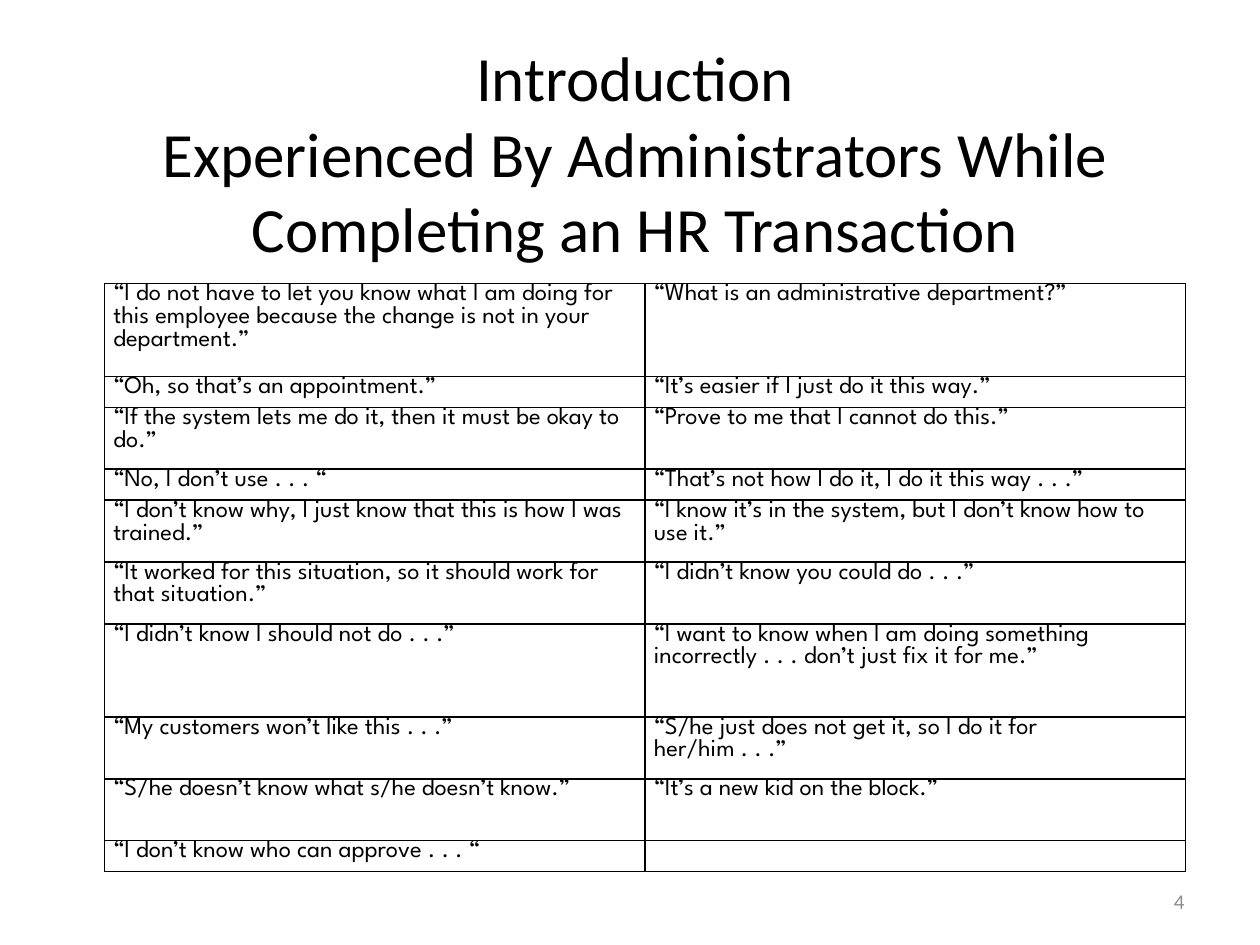
import pptx
import pptx.dml.color
import pptx.enum.text
import pptx.oxml
import pptx.oxml.ns
import pptx.util

WIDTH, HEIGHT = 10, 7.5
BLACK, GREY = "000000", "8C8C8C"
ALIGN = pptx.enum.text.PP_ALIGN
MIDDLE = pptx.enum.text.MSO_ANCHOR.MIDDLE
TABLE_BOX = (0.83, 2.25, 8.58, 4.67)
ROW_LINES = [3, 1, 2, 1, 2, 2, 3, 2, 2, 1]
QUOTES = [
    ("“I do not have to let you know what I am doing for this employee "
     "because the change is not in your department.”",
     "“What is an administrative department?”"),
    ("“Oh, so that’s an appointment.”",
     "“It’s easier if I just do it this way.”"),
    ("“If the system lets me do it, then it must be okay to do.”",
     "“Prove to me that I cannot do this.”"),
    ("“No, I don’t use . . . “",
     "“That’s not how I do it, I do it this way . . .”"),
    ("“I don’t know why, I just know that this is how I was trained.”",
     "“I know it’s in the system, but I don’t know how to use it.”"),
    ("“It worked for this situation, so it should work for that situation.”",
     "“I didn’t know you could do . . .”"),
    ("“I didn’t know I should not do . . .”",
     "“I want to know when I am doing something incorrectly . . . "
     "don’t just fix it for me.”"),
    ("“My customers won’t like this . . .”",
     "“S/he just does not get it, so I do it for her/him . . .”"),
    ("“S/he doesn’t know what s/he doesn’t know.”",
     "“It’s a new kid on the block.”"),
    ("“I don’t know who can approve . . . “", ""),
]


def inches(*lengths):
    return [pptx.util.Inches(length) for length in lengths]


def set_color(color_format, value):
    color_format.rgb = pptx.dml.color.RGBColor.from_string(value)


def write(paragraph, text, font_name, size, color, alignment):
    paragraph.text = text
    paragraph.alignment = alignment
    paragraph.font.name = font_name
    paragraph.font.size = pptx.util.Pt(size)
    set_color(paragraph.font.color, color)


def add_text(slide, box, text, size, color, alignment):
    shape = slide.shapes.add_textbox(*inches(*box))
    frame = shape.text_frame
    frame.word_wrap = True
    frame.vertical_anchor = MIDDLE
    write(frame.paragraphs[0], text, "Calibri", size, color, alignment)


def add_borders(cell, color, width):
    properties = cell._tc.get_or_add_tcPr()
    namespace = pptx.oxml.ns.nsdecls("a")
    for index, side in enumerate("LRTB"):
        border = pptx.oxml.parse_xml(
            f'<a:ln{side} {namespace} w="{pptx.util.Pt(width)}"><a:solidFill>'
            f'<a:srgbClr val="{color}"/></a:solidFill></a:ln{side}>')
        properties.insert(index, border)


def fill_cell(cell, text):
    cell.margin_left, cell.margin_right = inches(0.07, 0.07)
    cell.margin_top = cell.margin_bottom = 0
    cell.fill.background()
    add_borders(cell, BLACK, 1)
    paragraph = cell.text_frame.paragraphs[0]
    write(paragraph, text, "League Spartan", 14, BLACK, ALIGN.LEFT)
    if not text:
        paragraph._p.get_or_add_endParaRPr().set("sz", "1400")


def add_quotes(slide):
    frame = slide.shapes.add_table(len(QUOTES), 2, *inches(*TABLE_BOX))
    table = frame.table
    table.first_row = table.horz_banding = False
    line_height = TABLE_BOX[3] / sum(ROW_LINES)
    for row, lines, quotes in zip(table.rows, ROW_LINES, QUOTES):
        row.height = pptx.util.Inches(lines * line_height)
        for cell, quote in zip(row.cells, quotes):
            fill_cell(cell, quote)


def main():
    presentation = pptx.Presentation()
    presentation.slide_width, presentation.slide_height = inches(WIDTH, HEIGHT)
    slide = presentation.slides.add_slide(presentation.slide_layouts[6])
    add_text(slide, (0.5, 0.33, 9.08, 1.75),
             "Introduction\nExperienced By Administrators While "
             "Completing an HR Transaction", 36, BLACK, ALIGN.CENTER)
    add_text(slide, (7.17, 6.95, 2.33, 0.4), "4", 12, GREY, ALIGN.RIGHT)
    add_quotes(slide)
    presentation.save("out.pptx")


if __name__ == "__main__":
    main()
